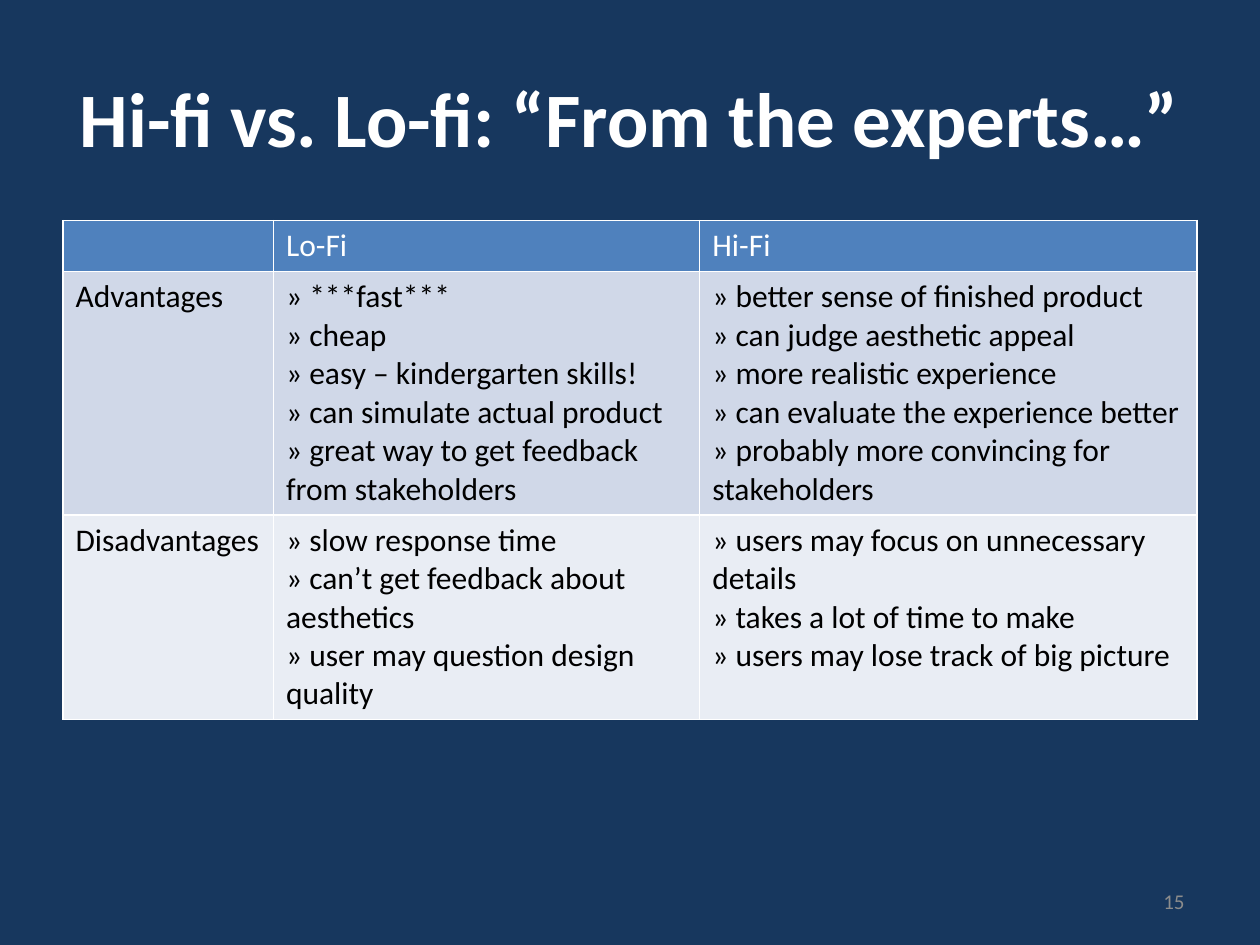
from lxml.etree import SubElement as Sub
from pptx import Presentation
from pptx.dml.color import RGBColor as Rgb
from pptx.enum.text import MSO_ANCHOR as Anchor, PP_ALIGN as Align
from pptx.oxml.ns import qn
from pptx.util import Pt

THEME = {
    "font": "Calibri",
    "back": "17375E",
    "white": "FFFFFF",
    "ink": "000000",
    "grey": "8C8C8C",
    "fills": ["4F81BD", "D0D8E8", "E9EDF4"],
    "title": 44,
    "body": 18,
    "note": 12,
    "line": 1,
}

TITLE = "Hi-fi vs. Lo-fi: “From the experts…”"
PAGE = "15"
ROWS = [
    ([], ["Lo-Fi"], ["Hi-Fi"]),
    (
        ["Advantages"],
        [
            "» ***fast***",
            "» cheap",
            "» easy – kindergarten skills!",
            "» can simulate actual product",
            "» great way to get feedback from stakeholders",
        ],
        [
            "» better sense of finished product",
            "» can judge aesthetic appeal",
            "» more realistic experience",
            "» can evaluate the experience better",
            "» probably more convincing for stakeholders",
        ],
    ),
    (
        ["Disadvantages"],
        [
            "» slow response time",
            "» can’t get feedback about aesthetics",
            "» user may question design quality",
        ],
        [
            "» users may focus on unnecessary details",
            "» takes a lot of time to make",
            "» users may lose track of big picture",
        ],
    ),
]
WIDTHS = [120.3, 243.6, 284.1]
HEIGHTS = [29.2, 139, 117]
LEFT, TOP = 36, 126


def write(frame, lines, size, color, bold=False, align=Align.LEFT):
    frame.text = "\n".join(lines)
    for para in frame.paragraphs:
        para.alignment = align
        font = para.font
        font.name = THEME["font"]
        font.size = Pt(size)
        font.bold = bold
        font.color.rgb = Rgb.from_string(color)


def label(slide, box, text, size, color, **look):
    frame = slide.shapes.add_textbox(*map(Pt, box)).text_frame
    frame.word_wrap = True
    frame.vertical_anchor = Anchor.MIDDLE
    write(frame, [text], size, color, **look)


def border(cell):
    props = cell._tc.get_or_add_tcPr()
    for spot, side in enumerate(["a:lnL", "a:lnR", "a:lnT", "a:lnB"]):
        line = Sub(props, qn(side), w=str(Pt(THEME["line"])))
        fill = Sub(line, qn("a:solidFill"))
        Sub(fill, qn("a:srgbClr"), val=THEME["white"])
        props.insert(spot, line)


def grid(slide):
    size = (LEFT, TOP, sum(WIDTHS), sum(HEIGHTS))
    table = slide.shapes.add_table(len(ROWS), len(WIDTHS), *map(Pt, size)).table
    table.first_row = table.horz_banding = False
    for col, width in zip(table.columns, WIDTHS):
        col.width = Pt(width)
    for i, row in enumerate(ROWS):
        table.rows[i].height = Pt(HEIGHTS[i])
        color = THEME["ink"] if i else THEME["white"]
        for j, lines in enumerate(row):
            cell = table.cell(i, j)
            cell.fill.solid()
            cell.fill.fore_color.rgb = Rgb.from_string(THEME["fills"][i])
            write(cell.text_frame, lines, THEME["body"], color)
            border(cell)


def main():
    deck = Presentation()
    deck.slide_width, deck.slide_height = Pt(720), Pt(540)
    slide = deck.slides.add_slide(deck.slide_layouts[6])
    back = slide.background.fill
    back.solid()
    back.fore_color.rgb = Rgb.from_string(THEME["back"])
    label(slide, (LEFT, 21.6, 648, 90), TITLE, THEME["title"], THEME["white"],
          bold=True, align=Align.CENTER)
    grid(slide)
    label(slide, (516, 500.5, 168, 28.8), PAGE, THEME["note"], THEME["grey"],
          align=Align.RIGHT)
    deck.save("out.pptx")


if __name__ == "__main__":
    main()
